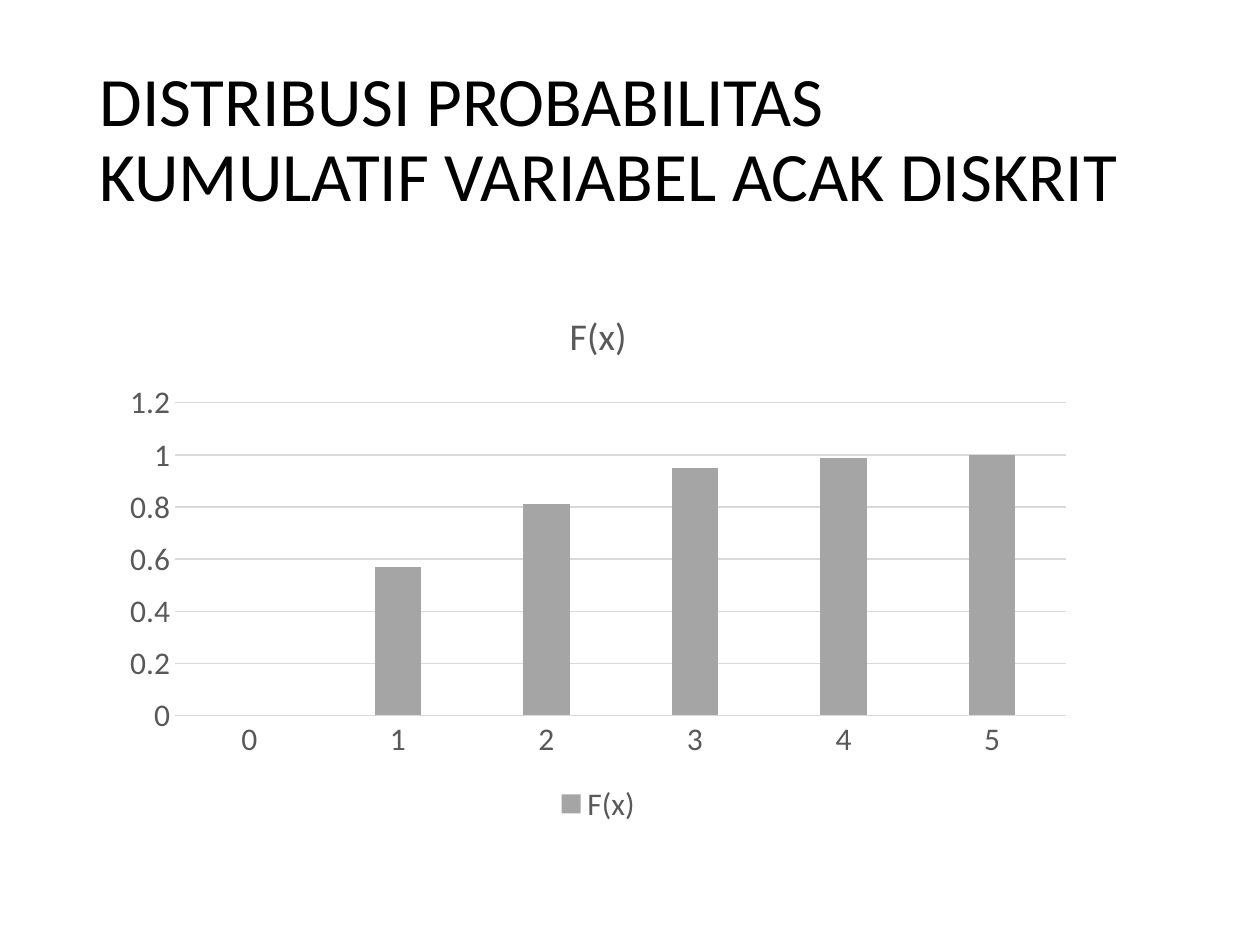
from pptx import Presentation
from pptx.chart.data import CategoryChartData
from pptx.dml.color import RGBColor
from pptx.enum.chart import XL_CHART_TYPE, XL_LEGEND_POSITION, XL_TICK_MARK
from pptx.enum.text import MSO_ANCHOR, MSO_AUTO_SIZE, PP_ALIGN
from pptx.util import Cm, Pt

BLACK = RGBColor(0x00, 0x00, 0x00)
TEXT_GREY = RGBColor(0x59, 0x59, 0x59)
LINE_GREY = RGBColor(0xD9, 0xD9, 0xD9)
BAR_GREY = RGBColor(0xA5, 0xA5, 0xA5)


def set_attrs(obj, fmt):
    """Set each attribute named in fmt on obj."""
    for name, value in fmt.items():
        setattr(obj, name, value)


def set_font(font, size, color):
    """Format a font in Calibri with a size and colour."""
    set_attrs(font, {"name": "Calibri", "size": Pt(size), "bold": False})
    font.color.rgb = color


def set_line(line):
    """Format a thin light grey line."""
    line.width = Pt(0.75)
    line.color.rgb = LINE_GREY


def add_title(s, text):
    """Fill and place the slide title."""
    sp = s.shapes.title
    set_attrs(sp, {"left": Cm(1.75), "top": Cm(1.01),
                   "width": Cm(21.9), "height": Cm(3.68)})
    tf = sp.text_frame
    set_attrs(tf, {"word_wrap": True, "auto_size": MSO_AUTO_SIZE.NONE,
                   "vertical_anchor": MSO_ANCHOR.MIDDLE})
    p = tf.paragraphs[0]
    set_attrs(p, {"alignment": PP_ALIGN.LEFT, "line_spacing": 0.9})
    r = p.add_run()
    r.text = text
    set_font(r.font, 39.6, BLACK)


def format_axes(chart):
    """Style both axes and the horizontal gridlines."""
    for axis in (chart.category_axis, chart.value_axis):
        set_attrs(axis, {"major_tick_mark": XL_TICK_MARK.NONE,
                         "minor_tick_mark": XL_TICK_MARK.NONE})
        set_font(axis.tick_labels.font, 18, TEXT_GREY)
    set_line(chart.category_axis.format.line)
    val = chart.value_axis
    set_attrs(val, {"minimum_scale": 0, "maximum_scale": 1.2,
                    "major_unit": 0.2})
    val.format.line.fill.background()
    set_line(val.major_gridlines.format.line)


def add_column_chart(s, name, cats, vals):
    """Add the column chart with its title and legend."""
    data = CategoryChartData()
    data.categories = cats
    data.add_series(name, vals)
    chart = s.shapes.add_chart(XL_CHART_TYPE.COLUMN_CLUSTERED, Cm(2.23),
                               Cm(5.75), Cm(19.66), Cm(10.97), data).chart
    set_font(chart.font, 18, BLACK)
    chart.has_title = True
    p = chart.chart_title.text_frame.paragraphs[0]
    r = p.add_run()
    r.text = name
    set_font(r.font, 21.6, TEXT_GREY)
    chart.has_legend = True
    set_attrs(chart.legend, {"position": XL_LEGEND_POSITION.BOTTOM,
                             "include_in_layout": False})
    set_font(chart.legend.font, 18, TEXT_GREY)
    plot = chart.plots[0]
    set_attrs(plot, {"gap_width": 219, "overlap": -27,
                     "vary_by_categories": False})
    fill = plot.series[0].format.fill
    fill.solid()
    fill.fore_color.rgb = BAR_GREY
    format_axes(chart)


def main():
    """Build the slide and save it."""
    prs = Presentation()
    set_attrs(prs, {"slide_width": Cm(25.4), "slide_height": Cm(19.05)})
    s = prs.slides.add_slide(prs.slide_layouts[5])
    add_title(s, "DISTRIBUSI PROBABILITAS KUMULATIF VARIABEL ACAK DISKRIT")
    add_column_chart(s, "F(x)", [str(x) for x in range(6)],
                     [None, 0.57, 0.81, 0.95, 0.99, 1])
    prs.save("out.pptx")


if __name__ == "__main__":
    main()
